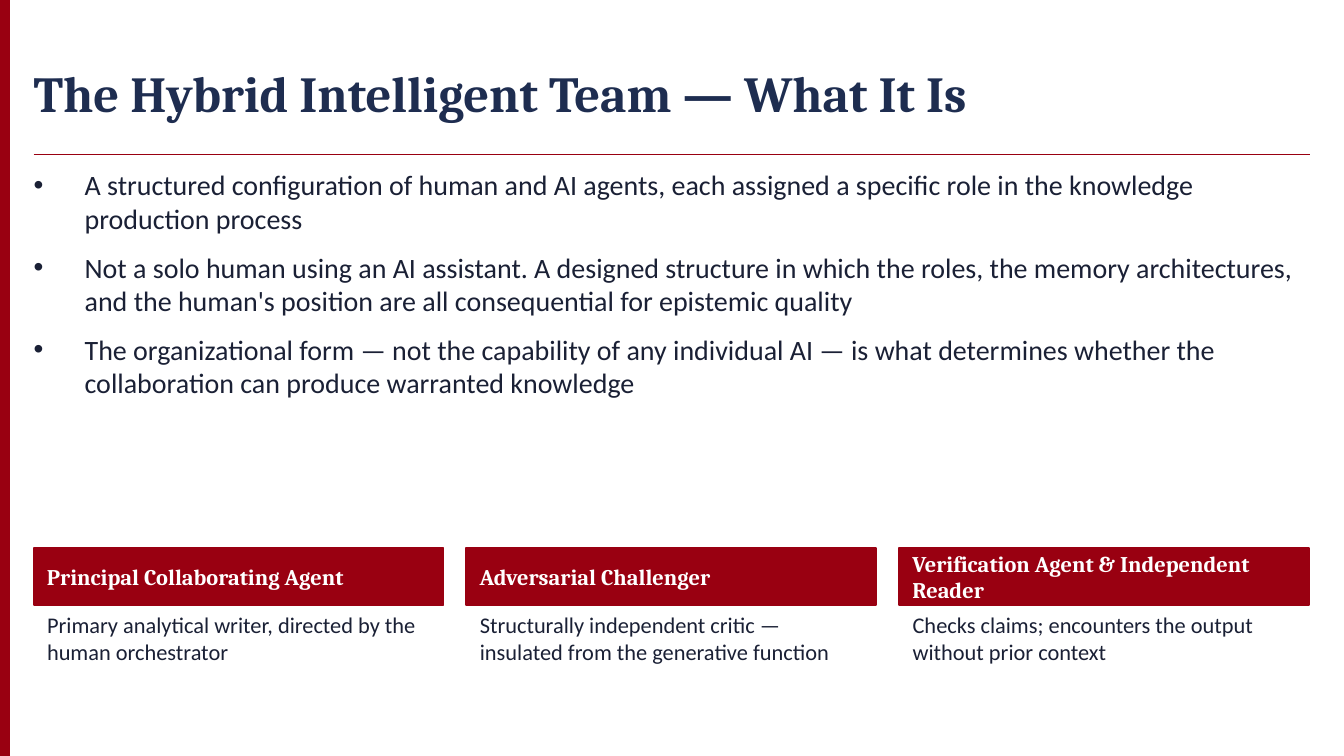
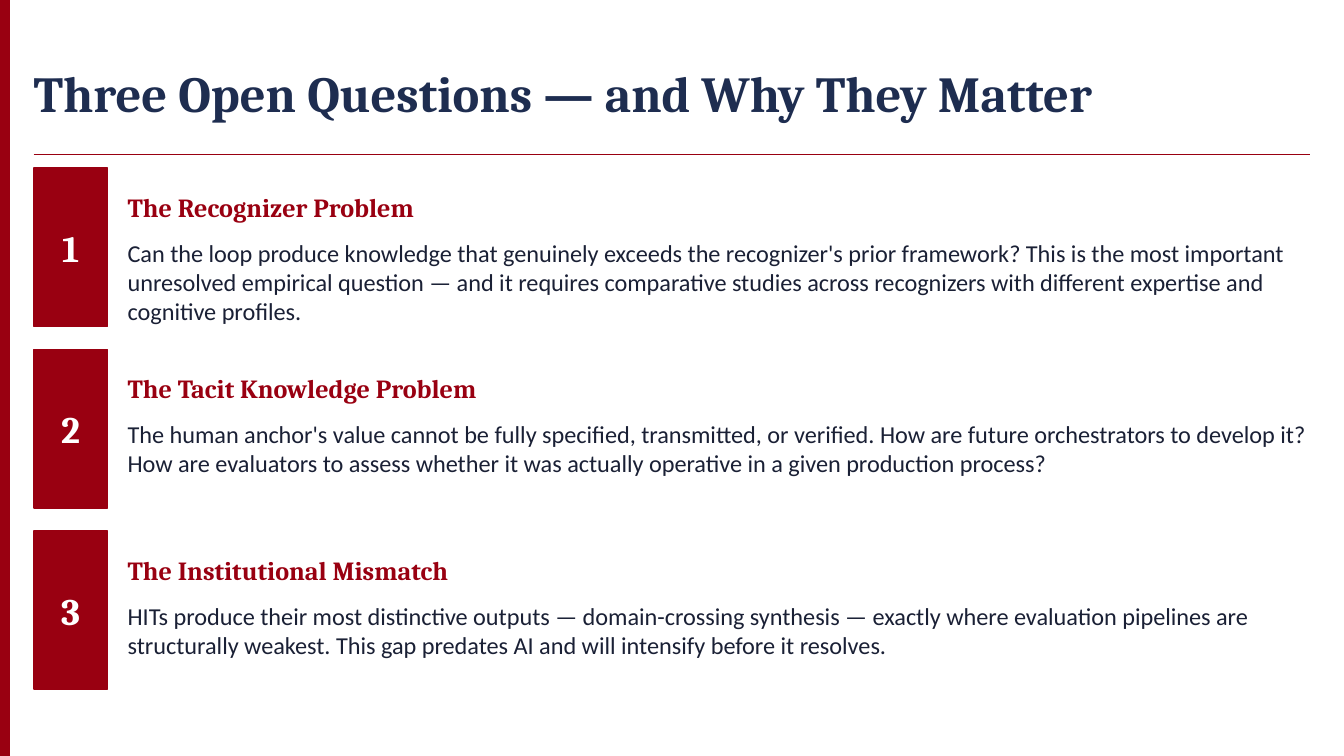
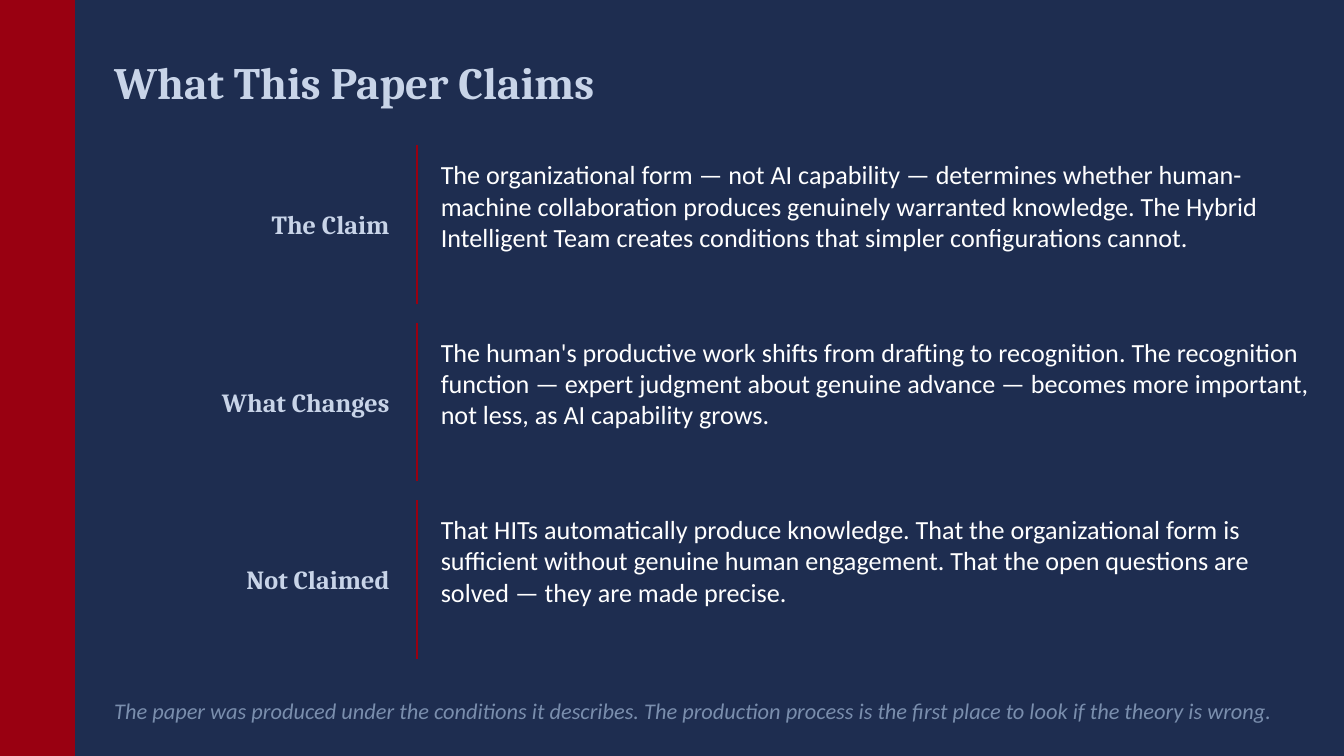
from dataclasses import dataclass

from lxml.etree import SubElement
from pptx import Presentation
from pptx.dml.color import RGBColor as Rgb
from pptx.enum.shapes import MSO_CONNECTOR as Connector, MSO_SHAPE as Shape
from pptx.enum.text import MSO_ANCHOR as Anchor, MSO_AUTO_SIZE as AutoSize, PP_ALIGN as Align
from pptx.oxml.ns import qn
from pptx.util import Inches, Pt


@dataclass(frozen=True)
class Style:
    font: str
    size: int
    color: str
    bold: bool = False
    italic: bool = False


class Theme:
    crimson = "990011"
    navy = "1E2D50"
    white = "FFFFFF"
    ink = "1A2035"
    ice = "C8D4E8"
    slate = "7A8EAD"
    serif = "Cambria"
    sans = "Calibri"

    title = Style(serif, 27, navy, bold=True)
    closing_title = Style(serif, 24, ice, bold=True)
    bullet = Style(sans, 15, ink)
    role = Style(serif, 12, white, bold=True)
    duty = Style(sans, 12, ink)
    number = Style(serif, 20, white, bold=True)
    question = Style(serif, 14, crimson, bold=True)
    explanation = Style(sans, 13, ink)
    claim_label = Style(serif, 14, ice, bold=True)
    claim = Style(sans, 14, white)
    closing_note = Style(sans, 12, slate, italic=True)


WIDTH = 10
HEIGHT = WIDTH * 9 / 16
LEFT, CONTENT_WIDTH, CONTENT_TOP = 0.25, 9.5, 1.25
TITLE_AND_BODY, TITLE_ONLY = 1, 5

BULLETS = [
    "A structured configuration of human and AI agents, each assigned a specific role "
    "in the knowledge production process",
    "Not a solo human using an AI assistant. A designed structure in which the roles, "
    "the memory architectures, and the human's position are all consequential for epistemic quality",
    "The organizational form — not the capability of any individual AI — is what determines "
    "whether the collaboration can produce warranted knowledge",
]
ROLES = [
    ("Principal Collaborating Agent",
     "Primary analytical writer, directed by the human orchestrator"),
    ("Adversarial Challenger",
     "Structurally independent critic — insulated from the generative function"),
    ("Verification Agent & Independent Reader",
     "Checks claims; encounters the output without prior context"),
]
QUESTIONS = [
    ("The Recognizer Problem",
     "Can the loop produce knowledge that genuinely exceeds the recognizer's prior framework? "
     "This is the most important unresolved empirical question — and it requires comparative "
     "studies across recognizers with different expertise and cognitive profiles."),
    ("The Tacit Knowledge Problem",
     "The human anchor's value cannot be fully specified, transmitted, or verified. How are "
     "future orchestrators to develop it? How are evaluators to assess whether it was actually "
     "operative in a given production process?"),
    ("The Institutional Mismatch",
     "HITs produce their most distinctive outputs — domain-crossing synthesis — exactly where "
     "evaluation pipelines are structurally weakest. This gap predates AI and will intensify "
     "before it resolves."),
]
CLAIMS = [
    ("The Claim",
     "The organizational form — not AI capability — determines whether human-machine "
     "collaboration produces genuinely warranted knowledge. The Hybrid Intelligent Team "
     "creates conditions that simpler configurations cannot."),
    ("What Changes",
     "The human's productive work shifts from drafting to recognition. The recognition "
     "function — expert judgment about genuine advance — becomes more important, not less, "
     "as AI capability grows."),
    ("Not Claimed",
     "That HITs automatically produce knowledge. That the organizational form is sufficient "
     "without genuine human engagement. That the open questions are solved — they are made precise."),
]


def write(frame, text, style, anchor=Anchor.TOP, align=Align.LEFT, inset=0):
    frame.text = text
    frame.word_wrap = True
    frame.auto_size = AutoSize.NONE
    frame.vertical_anchor = anchor
    frame.margin_left = frame.margin_right = Inches(inset)
    frame.margin_top = frame.margin_bottom = 0
    for paragraph in frame.paragraphs:
        paragraph.alignment = align
        for run in paragraph.runs:
            run.font.name = style.font
            run.font.size = Pt(style.size)
            run.font.bold = style.bold
            run.font.italic = style.italic
            run.font.color.rgb = Rgb.from_string(style.color)


def place(placeholder, left, top, width, height):
    placeholder.left, placeholder.top = Inches(left), Inches(top)
    placeholder.width, placeholder.height = Inches(width), Inches(height)


def add_text(slide, left, top, width, height, text, style, **layout):
    box = slide.shapes.add_textbox(Inches(left), Inches(top), Inches(width), Inches(height))
    write(box.text_frame, text, style, **layout)


def add_block(slide, left, top, width, height):
    block = slide.shapes.add_shape(
        Shape.RECTANGLE, Inches(left), Inches(top), Inches(width), Inches(height))
    block.shadow.inherit = False
    block.fill.solid()
    block.fill.fore_color.rgb = Rgb.from_string(Theme.crimson)
    block.line.color.rgb = Rgb.from_string(Theme.crimson)
    block.line.width = Pt(1)
    return block


def add_rule(slide, x1, y1, x2, y2, weight):
    rule = slide.shapes.add_connector(
        Connector.STRAIGHT, Inches(x1), Inches(y1), Inches(x2), Inches(y2))
    rule.line.color.rgb = Rgb.from_string(Theme.crimson)
    rule.line.width = Pt(weight)
    SubElement(rule.element.spPr, qn("a:effectLst"))


def add_slide(deck, layout, background, band_width):
    slide = deck.slides.add_slide(deck.slide_layouts[layout])
    slide.background.fill.solid()
    slide.background.fill.fore_color.rgb = Rgb.from_string(background)
    add_block(slide, 0, 0, band_width, HEIGHT)
    return slide


def add_content_slide(deck, layout, title):
    slide = add_slide(deck, layout, Theme.white, 0.07)
    place(slide.shapes.title, LEFT, 0.28, CONTENT_WIDTH, 0.82)
    write(slide.shapes.title.text_frame, title, Theme.title, Anchor.MIDDLE)
    add_rule(slide, LEFT, 1.15, LEFT + CONTENT_WIDTH, 1.15, 0.75)
    return slide


def fill_bullets(body, items):
    place(body, LEFT, CONTENT_TOP, CONTENT_WIDTH, 2.6)
    write(body.text_frame, "\n".join(items), Theme.bullet)
    for paragraph in body.text_frame.paragraphs:
        paragraph.space_before = Pt(0)
        paragraph.space_after = Pt(8)
        properties = paragraph._p.get_or_add_pPr()
        properties.set("marL", str(Inches(0.38)))
        properties.set("indent", str(-Inches(0.38)))
        SubElement(properties, qn("a:buChar"), char="•")


def add_role_card(slide, left, role, duty):
    width, padding = 3.05, 0.1
    header = add_block(slide, left, 4.08, width, 0.42)
    write(header.text_frame, role, Theme.role, Anchor.MIDDLE, inset=padding)
    add_text(slide, left + padding, 4.55, width - 2 * padding, 0.88, duty, Theme.duty)


def add_question(slide, top, number, question, explanation):
    badge = add_block(slide, LEFT, top, 0.55, 1.18)
    write(badge.text_frame, str(number), Theme.number, Anchor.MIDDLE, Align.CENTER)
    add_text(slide, 0.95, top + 0.1, 8.8, 0.38, question, Theme.question, anchor=Anchor.MIDDLE)
    add_text(slide, 0.95, top + 0.52, 8.8, 0.62, explanation, Theme.explanation)


def add_claim(slide, top, label, claim):
    height = 1.18
    add_text(slide, 0.85, top, 2.05, height, label, Theme.claim_label,
             anchor=Anchor.MIDDLE, align=Align.RIGHT)
    add_rule(slide, 3.1, top, 3.1, top + height, 1)
    add_text(slide, 3.28, top + 0.1, 6.47, 1, claim, Theme.claim)


def build_team_slide(deck):
    slide = add_content_slide(deck, TITLE_AND_BODY, "The Hybrid Intelligent Team — What It Is")
    fill_bullets(slide.placeholders[1], BULLETS)
    for column, (role, duty) in enumerate(ROLES):
        add_role_card(slide, LEFT + column * 3.22, role, duty)


def build_questions_slide(deck):
    slide = add_content_slide(deck, TITLE_ONLY, "Three Open Questions — and Why They Matter")
    for row, (question, explanation) in enumerate(QUESTIONS):
        add_question(slide, CONTENT_TOP + row * 1.35, row + 1, question, explanation)


def build_claims_slide(deck):
    slide = add_slide(deck, TITLE_ONLY, Theme.navy, 0.55)
    place(slide.shapes.title, 0.85, 0.32, 9, 0.58)
    write(slide.shapes.title.text_frame, "What This Paper Claims", Theme.closing_title, Anchor.MIDDLE)
    for row, (label, claim) in enumerate(CLAIMS):
        add_claim(slide, 1.08 + row * 1.32, label, claim)
    add_text(slide, 0.85, 5.1, 9, 0.38,
             "The paper was produced under the conditions it describes. The production process "
             "is the first place to look if the theory is wrong.",
             Theme.closing_note, anchor=Anchor.MIDDLE)


def main():
    deck = Presentation()
    deck.slide_width, deck.slide_height = Inches(WIDTH), Inches(HEIGHT)
    build_team_slide(deck)
    build_questions_slide(deck)
    build_claims_slide(deck)
    deck.save("out.pptx")


if __name__ == "__main__":
    main()
